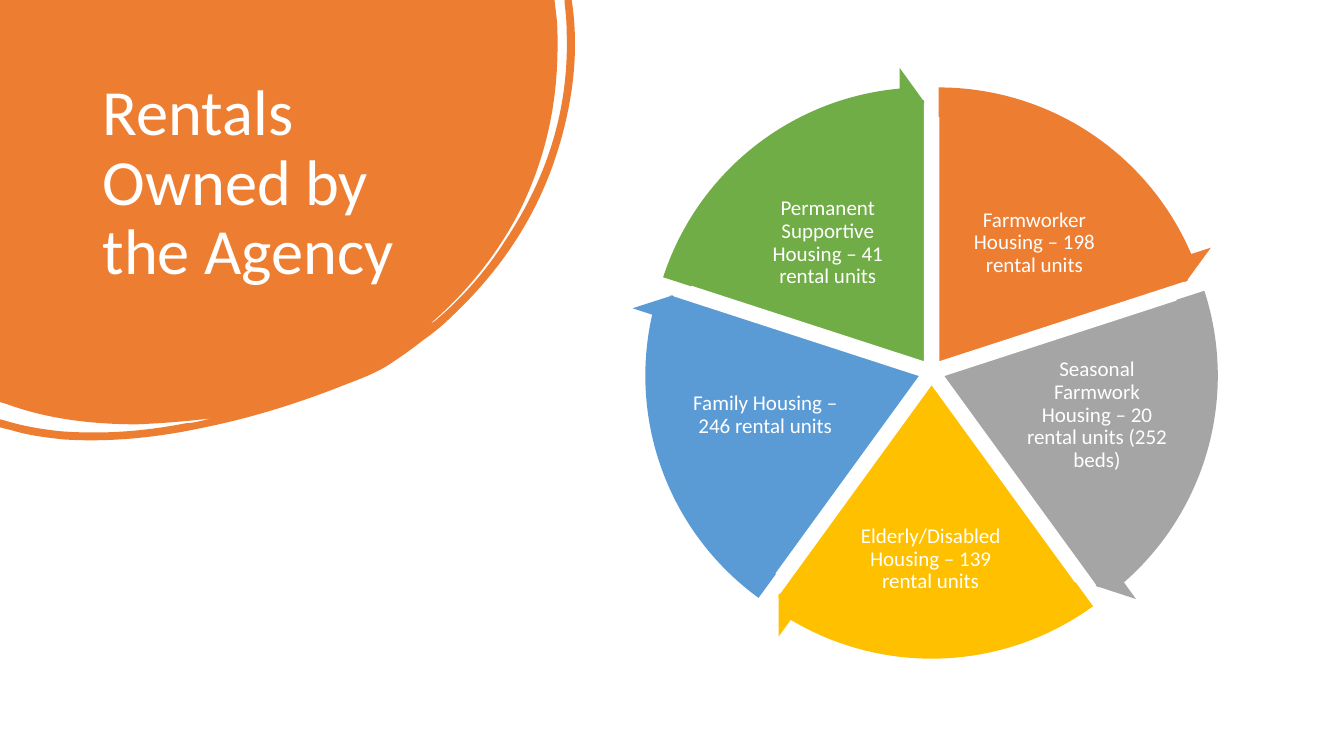
from math import cos, radians, sin

from lxml.etree import SubElement
from pptx import Presentation
from pptx.dml.color import RGBColor
from pptx.enum.shapes import MSO_SHAPE
from pptx.enum.text import MSO_ANCHOR, PP_ALIGN
from pptx.oxml.ns import qn
from pptx.util import Inches, Pt

ORANGE = RGBColor(0xED, 0x7D, 0x31)
GRAY = RGBColor(0xA5, 0xA5, 0xA5)
GOLD = RGBColor(0xFF, 0xC0, 0x00)
BLUE = RGBColor(0x5B, 0x9B, 0xD5)
GREEN = RGBColor(0x70, 0xAD, 0x47)
WHITE = RGBColor(0xFF, 0xFF, 0xFF)

FONT = "Calibri"
PIE_SIZE = 5.22
ARROW_SIZE = 5.86
SLICE_OFFSET = 0.12
ADJUSTMENT_PER_DEGREE = 0.6

# Each label box is centre x, centre y (from the wheel's centre), width, height.
HOUSING = [
    ("Farmworker Housing – 198 rental units", ORANGE, (1.02, -1.28, 1.66, 1.12)),
    ("Seasonal Farmwork Housing – 20 rental units (252 beds)", GRAY,
     (1.64, 0.43, 1.55, 1.24)),
    ("Elderly/Disabled Housing – 139 rental units", GOLD,
     (-0.01, 1.86, 1.49, 1.37)),
    ("Family Housing – 246 rental units", BLUE, (-1.65, 0.43, 1.55, 1.24)),
    ("Permanent Supportive Housing – 41 rental units", GREEN,
     (-1.03, -1.28, 1.66, 1.12)),
]

BRUSH_OUTLINE = [
    (5.5, 0), (5.52, 0.17),
    (5.53, 0.26, 5.53, 0.36, 5.53, 0.45),
    (5.53, 1.01, 5.42, 1.54, 5.18, 2.04),
    (4.96, 2.49, 4.65, 2.88, 4.27, 3.21),
    (4.29, 3.21, 4.3, 3.19, 4.32, 3.18),
    (4.59, 2.95, 4.82, 2.69, 5.01, 2.39),
    (5.43, 1.76, 5.65, 1.07, 5.62, 0.3),
    (5.62, 0.21, 5.61, 0.12, 5.6, 0.03),
    (5.6, 0), (5.67, 0), (5.68, 0.07),
    (5.74, 0.54, 5.68, 1.02, 5.53, 1.5),
    (5.33, 2.14, 4.97, 2.68, 4.48, 3.14),
    (4.39, 3.23, 4.29, 3.31, 4.19, 3.38),
    (4.09, 3.46, 3.99, 3.53, 3.87, 3.61),
    (3.75, 3.69, 3.6, 3.75, 3.44, 3.81),
    (2.99, 3.99, 2.52, 4.14, 2.03, 4.24),
    (1.57, 4.34, 1.1, 4.39, 0.63, 4.36),
    (0.45, 4.34, 0.28, 4.32, 0.12, 4.27),
    (0, 4.24), (0, 4.16), (0.04, 4.17),
    (0.23, 4.23, 0.42, 4.26, 0.61, 4.28),
    (1.03, 4.31, 1.43, 4.28, 1.84, 4.2),
    (1.89, 4.2, 1.93, 4.19, 1.98, 4.18),
    (2.02, 4.17, 2.06, 4.16, 2.1, 4.15),
    (1.86, 4.18, 1.61, 4.2, 1.36, 4.21),
    (0.92, 4.21, 0.48, 4.16, 0.07, 4.01),
    (0, 3.99),
]


def paint(shape, color):
    """Give a shape a plain fill with no shadow or line."""
    shape.shadow.inherit = False
    shape.fill.solid()
    shape.fill.fore_color.rgb = color
    shape.line.fill.background()


def add_text(shapes, box, text, size):
    """Add a wrapped white text box and return its text frame."""
    text_frame = shapes.add_textbox(*map(Inches, box)).text_frame
    text_frame.word_wrap = True
    text_frame.vertical_anchor = MSO_ANCHOR.MIDDLE
    text_frame.text = text
    paragraph = text_frame.paragraphs[0]
    paragraph.line_spacing = 0.9
    font = paragraph.runs[0].font
    font.name = FONT
    font.size = Pt(size)
    font.color.rgb = WHITE
    return text_frame


def add_brush(slide, left, top):
    """Draw the brushed corner, bending the sides that are curves."""
    builder = slide.shapes.build_freeform(Inches(left), Inches(top))
    builder.add_line_segments(
        [(Inches(left + segment[-2]), Inches(top + segment[-1]))
         for segment in BRUSH_OUTLINE], close=True)
    brush = builder.convert_to_shape()
    paint(brush, ORANGE)
    sides = list(brush._element.iter(qn("a:lnTo")))
    for side, segment in zip(sides, BRUSH_OUTLINE):
        if len(segment) == 6:
            curve = side.makeelement(qn("a:cubicBezTo"))
            for x, y in zip(segment[::2], segment[1::2]):
                SubElement(curve, qn("a:pt"), x=str(Inches(x)), y=str(Inches(y)))
            side.getparent().replace(side, curve)


def add_title_region(slide, left, top):
    """Place the brushed corner and the title on it."""
    add_brush(slide, left, top)
    add_text(slide.shapes, (left + 0.92, top + 0.72, 3.52, 2.22),
             "Rentals Owned by the Agency", 46)


def add_centered_shape(shapes, kind, center, size, color, adjustments):
    """Add a square preset shape around a centre."""
    x, y = center
    shape = shapes.add_shape(kind, Inches(x - size / 2), Inches(y - size / 2),
                             Inches(size), Inches(size))
    for index, value in enumerate(adjustments):
        shape.adjustments[index] = value
    paint(shape, color)
    return shape


def add_wheel(slide, center_x, center_y):
    """Draw the housing slices, their labels and the arrows around them."""
    shapes = slide.shapes.add_group_shape().shapes
    sweep = 360 / len(HOUSING)
    arrows = []
    for index, (text, color, (x, y, width, height)) in enumerate(HOUSING):
        start_degrees = 270 + index * sweep
        middle = radians(start_degrees + sweep / 2)
        center = (center_x + SLICE_OFFSET * cos(middle),
                  center_y + SLICE_OFFSET * sin(middle))
        start = start_degrees % 360 * ADJUSTMENT_PER_DEGREE
        end = (start_degrees + sweep) % 360 * ADJUSTMENT_PER_DEGREE
        pie = add_centered_shape(shapes, MSO_SHAPE.PIE, center, PIE_SIZE, color,
                                 (start, end))
        pie.line.color.rgb = WHITE
        pie.line.width = Pt(1)
        box = (center_x + x - width / 2, center_y + y - height / 2, width, height)
        label = add_text(shapes, box, text, 15)
        label.margin_left = label.margin_right = Inches(0.02)
        label.margin_top = label.margin_bottom = Inches(0.02)
        label.paragraphs[0].alignment = PP_ALIGN.CENTER
        arrows.append((center, color, (0.05, 3.28, end - 3.28, start, 0.06)))
    for center, color, adjustments in arrows:
        add_centered_shape(shapes, MSO_SHAPE.CIRCULAR_ARROW, center, ARROW_SIZE,
                           color, adjustments)


def main():
    """Build and save the rentals slide."""
    presentation = Presentation()
    presentation.slide_width = Inches(13.33)
    presentation.slide_height = Inches(7.5)
    slide = presentation.slides.add_slide(presentation.slide_layouts[6])
    add_title_region(slide, 0, 0)
    add_wheel(slide, 9.24, 3.69)
    presentation.save("out.pptx")


if __name__ == "__main__":
    main()
